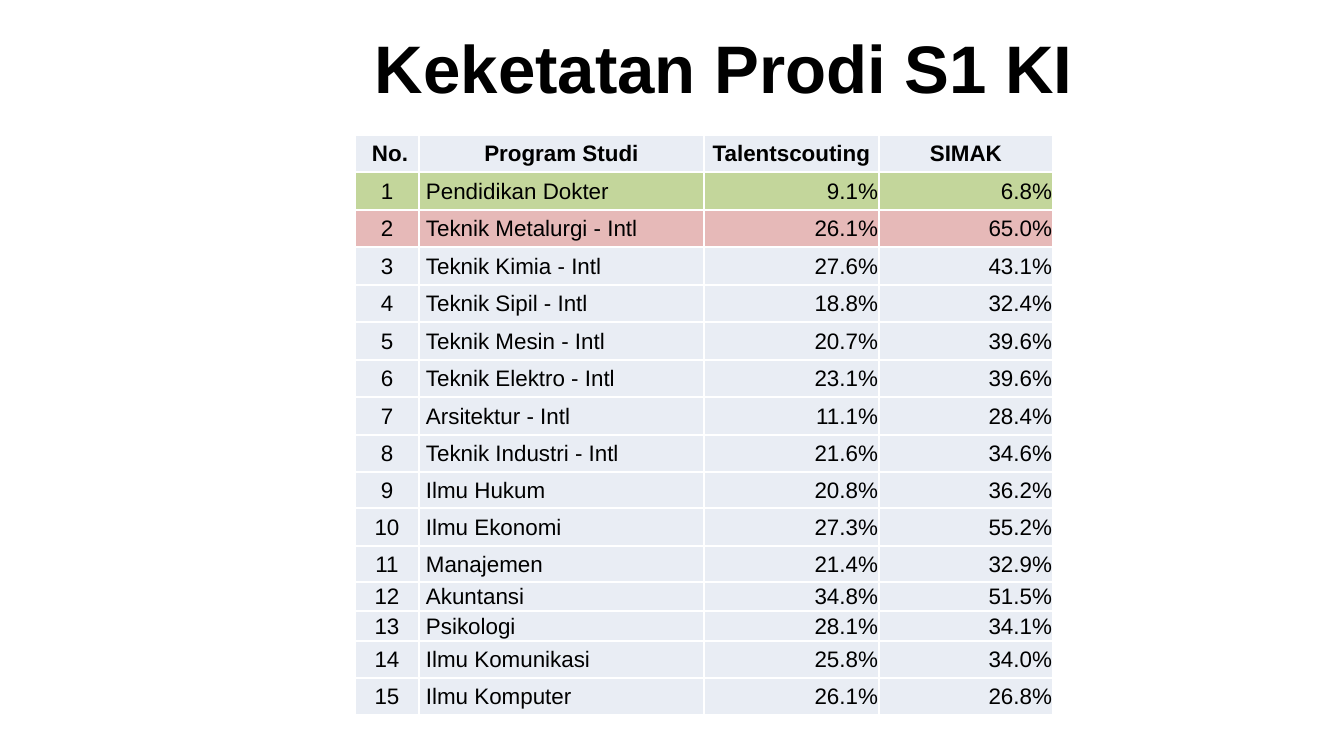
from lxml import etree
from pptx import Presentation
from pptx.dml.color import RGBColor
from pptx.enum.text import MSO_ANCHOR, PP_ALIGN
from pptx.oxml.ns import qn
from pptx.util import Emu, Pt

LEFT, CENTER, RIGHT = PP_ALIGN.LEFT, PP_ALIGN.CENTER, PP_ALIGN.RIGHT
MIDDLE = MSO_ANCHOR.MIDDLE
BLACK = RGBColor(0x00, 0x00, 0x00)
WHITE = RGBColor(0xFF, 0xFF, 0xFF)
PALE = RGBColor(0xE9, 0xED, 0xF4)
GREEN = RGBColor(0xC3, 0xD6, 0x9B)
RED = RGBColor(0xE6, 0xB9, 0xB8)

HEADER = ("No.", "Program Studi", "Talentscouting", "SIMAK")
PROGRAMS = [
    ("Pendidikan Dokter", "9.1%", "6.8%"),
    ("Teknik Metalurgi - Intl", "26.1%", "65.0%"),
    ("Teknik Kimia - Intl", "27.6%", "43.1%"),
    ("Teknik Sipil - Intl", "18.8%", "32.4%"),
    ("Teknik Mesin - Intl", "20.7%", "39.6%"),
    ("Teknik Elektro - Intl", "23.1%", "39.6%"),
    ("Arsitektur - Intl", "11.1%", "28.4%"),
    ("Teknik Industri - Intl", "21.6%", "34.6%"),
    ("Ilmu Hukum", "20.8%", "36.2%"),
    ("Ilmu Ekonomi", "27.3%", "55.2%"),
    ("Manajemen", "21.4%", "32.9%"),
    ("Akuntansi", "34.8%", "51.5%"),
    ("Psikologi", "28.1%", "34.1%"),
    ("Ilmu Komunikasi", "25.8%", "34.0%"),
    ("Ilmu Komputer", "26.1%", "26.8%"),
]
COLUMN_WIDTHS = [64, 285, 175, 174]
ROW_HEIGHTS = [37, 38] * 4 + [37, 36, 38, 36, 29, 30, 37, 37]
COLUMN_ALIGNS = [CENTER, LEFT, RIGHT, RIGHT]
ROW_FILLS = {1: GREEN, 2: RED}
INDENTED = {(0, 0)} | {(i, 1) for i in range(1, len(PROGRAMS) + 1)}


def px(n):
    return Emu(round(n * 914400 / 134.4))


class Deck:
    font = "Arial"

    def __init__(self, width, height):
        self.prs = Presentation()
        self.prs.slide_width, self.prs.slide_height = px(width), px(height)
        self.s = self.prs.slides.add_slide(self.prs.slide_layouts[6])

    def set_text(self, tf, text, size, bold, align):
        p = tf.paragraphs[0]
        p.text = text
        p.alignment = align
        p.font.name = self.font
        p.font.size = Pt(size)
        p.font.bold = bold
        p.font.color.rgb = BLACK

    def title(self, text, x, y, w, h):
        tf = self.s.shapes.add_textbox(px(x), px(y), px(w), px(h)).text_frame
        tf.word_wrap = True
        tf.vertical_anchor = MIDDLE
        self.set_text(tf, text, 36, True, CENTER)

    def borders(self, cell):
        tc_pr = cell._tc.get_or_add_tcPr()
        for side in ("a:lnL", "a:lnR", "a:lnT", "a:lnB"):
            ln = etree.SubElement(tc_pr, qn(side), w=str(Pt(1)))
            fill = etree.SubElement(ln, qn("a:solidFill"))
            etree.SubElement(fill, qn("a:srgbClr"), val=str(WHITE))

    def cell(self, cell, text, bold, align, fill, indent):
        cell.margin_left = px(7 if indent else 1)
        cell.margin_right = cell.margin_top = px(1)
        cell.margin_bottom = 0
        cell.vertical_anchor = MIDDLE
        self.borders(cell)
        cell.fill.solid()
        cell.fill.fore_color.rgb = fill
        self.set_text(cell.text_frame, text, 12, bold, align)

    def table(self, rows, x, y):
        table = self.s.shapes.add_table(
            len(rows), len(COLUMN_WIDTHS), px(x), px(y),
            px(sum(COLUMN_WIDTHS)), px(sum(ROW_HEIGHTS))).table
        table.first_row = table.horz_banding = False
        for column, width in zip(table.columns, COLUMN_WIDTHS):
            column.width = px(width)
        for i, values in enumerate(rows):
            table.rows[i].height = px(ROW_HEIGHTS[i])
            for j, text in enumerate(values):
                align = COLUMN_ALIGNS[j] if i else CENTER
                self.cell(table.cell(i, j), text, i == 0, align,
                          ROW_FILLS.get(i, PALE), (i, j) in INDENTED)


def main():
    deck = Deck(1344, 756)
    deck.title("Keketatan Prodi S1 KI", 142, 28, 1164, 77)
    numbered = [(str(n), *program) for n, program in enumerate(PROGRAMS, 1)]
    deck.table([HEADER] + numbered, 355, 135)
    deck.prs.save("out.pptx")


if __name__ == "__main__":
    main()
